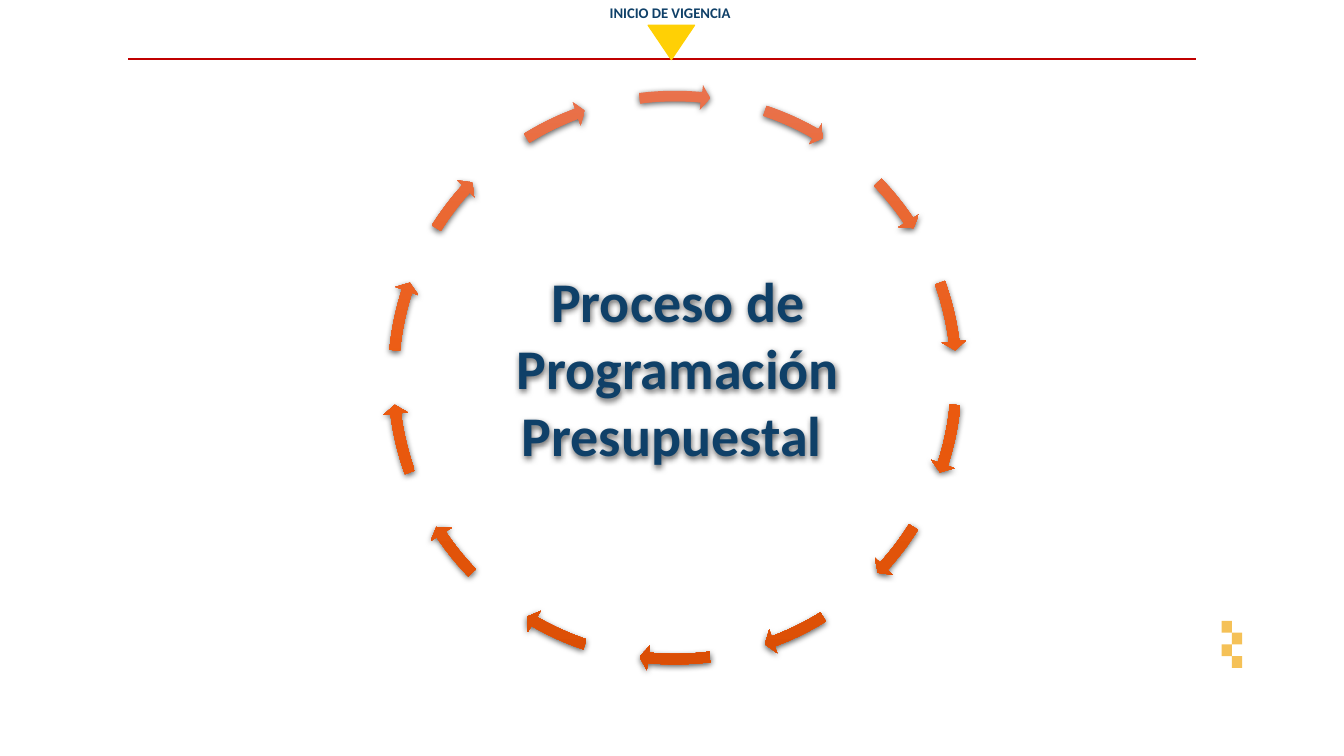
from copy import deepcopy

from lxml import etree
from pptx import Presentation
from pptx.dml.color import RGBColor
from pptx.enum.shapes import MSO_CONNECTOR, MSO_SHAPE
from pptx.enum.text import MSO_ANCHOR, MSO_AUTO_SIZE, PP_ALIGN
from pptx.oxml.ns import qn
from pptx.util import Pt

NAVY = RGBColor(0x0F, 0x40, 0x68)
RED = RGBColor(0xC0, 0x00, 0x00)
YELLOW = RGBColor(0xFF, 0xD0, 0x05)
AMBER = RGBColor(0xF5, 0xC1, 0x57)
BLACK = RGBColor(0x00, 0x00, 0x00)
ORANGES = [(0, RGBColor(0xE9, 0x72, 0x4D)),
           (0.5, RGBColor(0xEC, 0x5B, 0x10)),
           (1, RGBColor(0xDB, 0x4E, 0x05))]

STRAIGHT = MSO_CONNECTOR.STRAIGHT
ARROW = MSO_SHAPE.CIRCULAR_ARROW
TRIANGLE = MSO_SHAPE.ISOSCELES_TRIANGLE
RECTANGLE = MSO_SHAPE.RECTANGLE
FIT_SHAPE = MSO_AUTO_SIZE.SHAPE_TO_FIT_TEXT
TOP = MSO_ANCHOR.TOP
CENTER, LEFT = PP_ALIGN.CENTER, PP_ALIGN.LEFT
TITLE_ONLY = 5

# Arrow start and end adjustments for half the ring; HALF_TURN is 180 degrees
HALF_TURN = 108
HALF_RING = [(65.18, 71.98), (81.65, 87.68), (96.19, 103.58), (111.34, 118.73),
             (127.24, 133.26), (142.94, 149.74), (157.67, 165.25)]


def place(s, left, top, width, height):
    box = {"left": left, "top": top, "width": width, "height": height}
    for name, value in box.items():
        setattr(s, name, Pt(value))


def add_shadow(s):
    s.shadow.inherit = False
    effects = s._element.spPr.find(qn("a:effectLst"))
    shadow = etree.SubElement(effects, qn("a:outerShdw"), blurRad=str(Pt(4.5)),
                              dist=str(Pt(1.5)), dir="5400000", rotWithShape="0")
    color = etree.SubElement(shadow, qn("a:srgbClr"), val=str(BLACK))
    etree.SubElement(color, qn("a:alpha"), val="63000")


def write_text(s, text, size, align, wrap):
    tf = s.text_frame
    layout = {"word_wrap": wrap, "auto_size": FIT_SHAPE, "vertical_anchor": TOP}
    for name, value in layout.items():
        setattr(tf, name, value)
    p = tf.paragraphs[0]
    p.alignment = align
    r = p.add_run()
    r.text = text
    style = {"name": "Calibri", "size": Pt(size), "bold": True}
    for name, value in style.items():
        setattr(r.font, name, value)
    r.font.color.rgb = NAVY


def add_solid(slide, kind, box, color):
    s = slide.shapes.add_shape(kind, *map(Pt, box))
    s.shadow.inherit = False
    s.fill.solid()
    s.fill.fore_color.rgb = color
    s.line.fill.background()
    return s


def add_rule(slide, left, right, y):
    line = slide.shapes.add_connector(STRAIGHT, Pt(left), Pt(y), Pt(right), Pt(y))
    line.line.color.rgb = RED
    line.line.width = Pt(1.5)
    etree.SubElement(line._element.spPr, qn("a:effectLst"))


def add_ring_arrow(slide, start, end):
    s = slide.shapes.add_shape(ARROW, Pt(272.2), Pt(59.8), Pt(419.8), Pt(419.8))
    for i, value in enumerate((0.018, 1.083, end, start, 0.021)):
        s.adjustments[i] = value
    s.fill.gradient()
    s.fill.gradient_angle = 270
    stop_list = s._element.spPr.find(qn("a:gradFill")).find(qn("a:gsLst"))
    stop_list.append(deepcopy(stop_list[0]))
    for stop, (position, color) in zip(s.fill.gradient_stops, ORANGES):
        stop.position = position
        stop.color.rgb = color
    s.line.fill.background()
    add_shadow(s)


def main():
    prs = Presentation()
    prs.slide_width, prs.slide_height = Pt(960), Pt(540)
    slide = prs.slides.add_slide(prs.slide_layouts[TITLE_ONLY])

    # Header rule
    add_rule(slide, 91.5, 854, 42)

    # Central title
    title = slide.shapes.title
    place(title, 333.4, 186.5, 301.7, 152.6)
    write_text(title, "Proceso de Programación Presupuestal ", 40, CENTER, True)
    add_shadow(title)

    # Ring of arrows: the second half repeats the first, half a turn on
    for turn in (0, HALF_TURN):
        for start, end in HALF_RING:
            add_ring_arrow(slide, (start + turn) % (2 * HALF_TURN),
                           (end + turn) % (2 * HALF_TURN))

    # Start marker and its label
    marker = add_solid(slide, TRIANGLE, (463, 18, 33.1, 24.5), YELLOW)
    marker.rotation = 180
    marker.line.color.rgb = YELLOW
    marker.line.width = Pt(1)
    label = slide.shapes.add_textbox(Pt(428.4), Pt(-0.7), Pt(102.2), Pt(20.2))
    write_text(label, "INICIO DE VIGENCIA", 10.5, LEFT, False)

    # Staggered squares in the corner
    for i in range(4):
        box = (872.6 + 7.3 * (i % 2), 443.5 + 8.4 * i, 7.3, 8.4)
        add_solid(slide, RECTANGLE, box, AMBER)

    prs.save("out.pptx")


if __name__ == "__main__":
    main()
